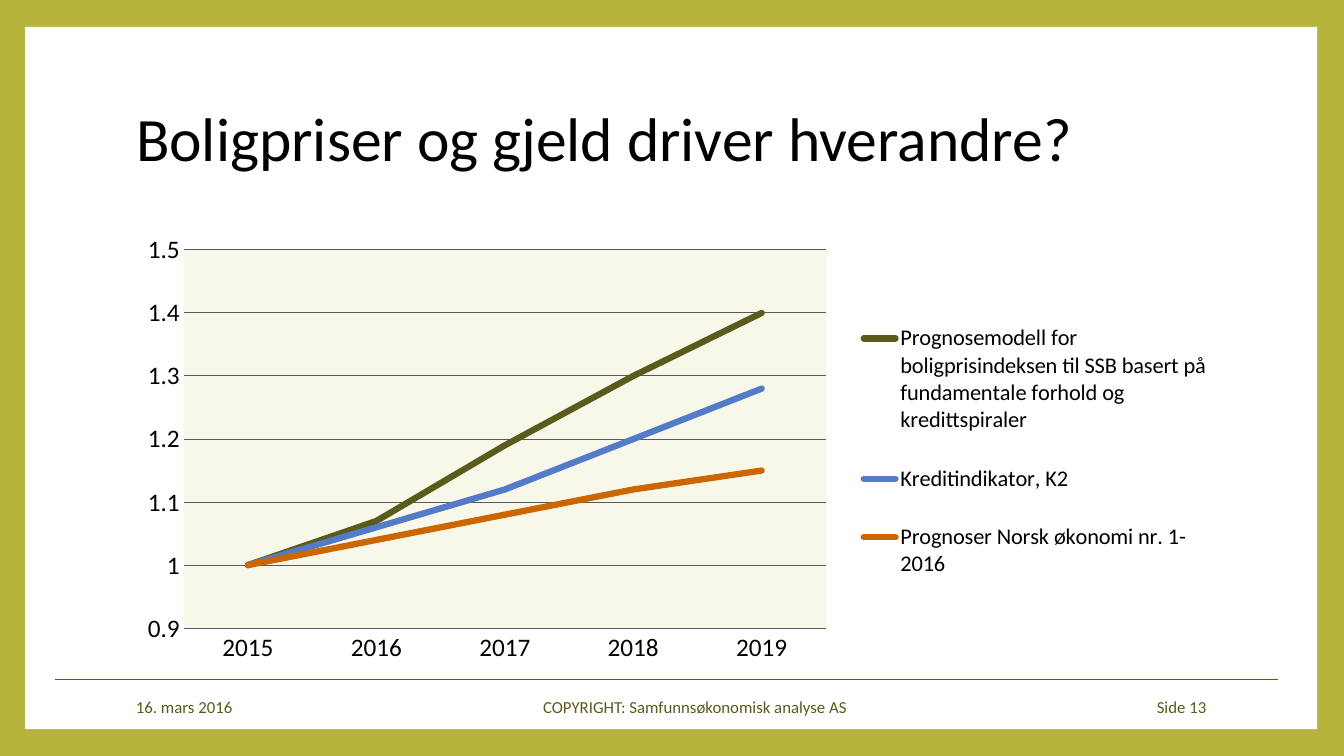
"""Build the slide on house prices and debt with its line chart."""
from lxml import etree
from pptx import Presentation, util as u
from pptx.chart.data import CategoryChartData
from pptx.dml.color import RGBColor
from pptx.enum import chart as ch, shapes, text
from pptx.oxml import parse_xml
from pptx.oxml.ns import nsdecls, qn

OLIVE, BLACK, GREY = "5B5A1D", "000000", "595959"
CELL = u.Inches(1 / 12)


def style(font, size, colour):
    font.name, font.size = "Calibri", u.Pt(size)
    font.color.rgb = RGBColor.from_string(colour)


def grid(*cells):
    return [u.Emu(round(cell * CELL)) for cell in cells]


prs = Presentation()
prs.slide_width, prs.slide_height = grid(160, 90)
slide = prs.slides.add_slide(prs.slide_layouts[5])
slide.background.fill.solid()
slide.background.fill.fore_color.rgb = RGBColor.from_string("B6B43C")

panel = slide.shapes.add_shape(shapes.MSO_SHAPE.RECTANGLE, *grid(3, 3.2, 153.8, 83.6))
panel.shadow.inherit = False
panel.fill.solid()
panel.fill.fore_color.rgb = RGBColor.from_string("FFFFFF")
panel.line.fill.background()

rule = slide.shapes.add_connector(shapes.MSO_CONNECTOR.STRAIGHT, *grid(6.5, 80.9, 152.2, 80.9))
rule.line.color.rgb = RGBColor.from_string(OLIVE)
rule.line.width = u.Pt(0.5)
etree.SubElement(rule.element.spPr, qn("a:effectLst"))

title = slide.shapes.title
panel.element.getparent().append(title.element)
title.left, title.top, title.width, title.height = grid(15, 8, 129.6, 17.75)
title.text_frame.text = "Boligpriser og gjeld driver hverandre?"
title.text_frame.vertical_anchor = text.MSO_ANCHOR.MIDDLE
heading = title.text_frame.paragraphs[0]
heading.alignment = text.PP_ALIGN.LEFT
heading.line_spacing = 0.9
style(heading.font, 44, BLACK)

for left, width, wording, align in (
    (15, 30.6, "16. mars 2016", text.PP_ALIGN.LEFT),
    (51.8, 61.9, "COPYRIGHT: Samfunnsøkonomisk analyse AS", text.PP_ALIGN.CENTER),
    (122.4, 22.4, "Side 13", text.PP_ALIGN.RIGHT),
):
    footer = slide.shapes.add_textbox(*grid(left, 81.75, width, 4.8)).text_frame
    footer.word_wrap = True
    footer.vertical_anchor = text.MSO_ANCHOR.MIDDLE
    footer.text = wording
    footer.paragraphs[0].alignment = align
    style(footer.paragraphs[0].font, 12, OLIVE)

forecasts = (
    ("Prognosemodell for boligprisindeksen til SSB basert på fundamentale forhold og kredittspiraler",
     (1, 1.07, 1.19, 1.3, 1.4), OLIVE),
    ("Kreditindikator, K2", (1, 1.06, 1.12, 1.2, 1.28), "537BC7"),
    ("Prognoser Norsk økonomi nr. 1-2016", (1, 1.04, 1.08, 1.12, 1.15), "CC6600"),
)
data = CategoryChartData()
data.categories = [str(year) for year in range(2015, 2020)]
for name, values, _ in forecasts:
    data.add_series(name, values)
chart = slide.shapes.add_chart(ch.XL_CHART_TYPE.LINE, *grid(15, 27, 129.6, 53), data).chart
chart.has_title = False
style(chart.font, 18, BLACK)
plot = chart.plots[0]
plot.vary_by_categories = False
for series, (_, _, colour) in zip(plot.series, forecasts):
    series.smooth = False
    series.marker.style = ch.XL_MARKER_STYLE.NONE
    series.format.line.color.rgb = RGBColor.from_string(colour)
    series.format.line.width = u.Pt(4.5)
    series.format.line._get_or_add_ln().set("cap", "rnd")

years, index = chart.category_axis, chart.value_axis
for axis in (years, index):
    axis.major_tick_mark = axis.minor_tick_mark = ch.XL_TICK_MARK.NONE
    style(axis.tick_labels.font, 18, BLACK)
index.minimum_scale, index.maximum_scale, index.major_unit = 0.9, 1.5, 0.1
index.tick_labels.number_format = "General"
index.tick_labels.number_format_is_linked = False
index.has_major_gridlines = True
index.format.line.fill.background()
for line in (years.format.line, index.major_gridlines.format.line):
    line.color.rgb = RGBColor.from_string(GREY)
    line.width = u.Pt(0.75)

chart.has_legend = True
legend = chart.legend
legend.position = ch.XL_LEGEND_POSITION.RIGHT
legend.include_in_layout = False
style(legend.font, 16, BLACK)

plot_area = chart.element.chart.plotArea
for part, target, share in (
    (plot_area, '<c:layoutTarget val="inner"/>', (0.053, 0.052, 0.59, 0.85)),
    (legend.element if hasattr(legend, "element") else legend._element, "", (0.67, 0.15, 0.33, 0.71)),
):
    for old in part.findall(qn("c:layout")):
        part.remove(old)
    edges = "".join(f'<c:{side} val="{value}"/>' for side, value in zip("xywh", share))
    layout = parse_xml(
        f'<c:layout {nsdecls("c")}><c:manualLayout>{target}<c:xMode val="edge"/>'
        f'<c:yMode val="edge"/>{edges}</c:manualLayout></c:layout>')
    part.insert(0 if part is plot_area else 1, layout)
plot_area.append(parse_xml(
    f'<c:spPr {nsdecls("c", "a")}><a:solidFill><a:srgbClr val="F8F8EA"/></a:solidFill></c:spPr>'))

prs.save("out.pptx")
